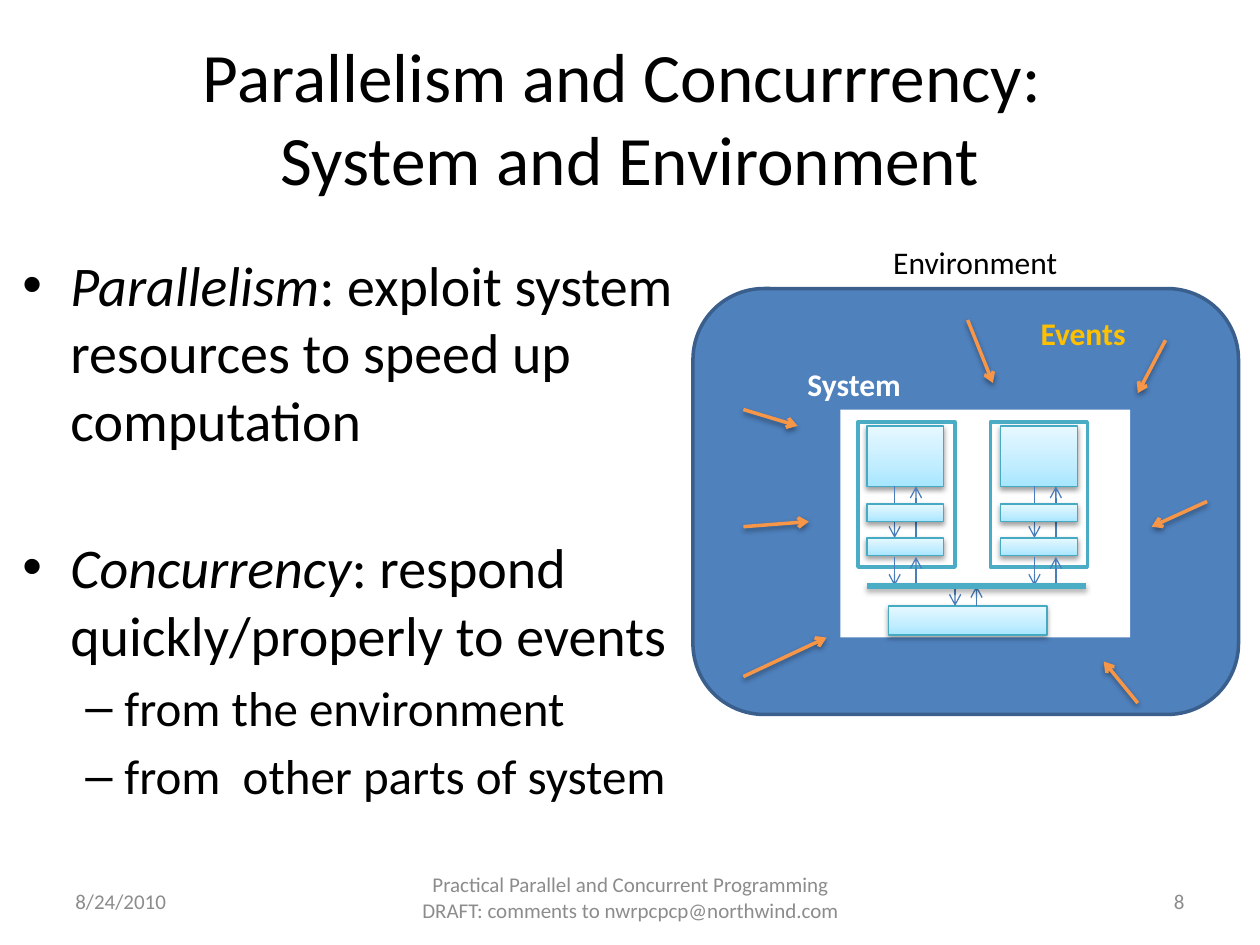
from copy import deepcopy

from lxml import etree
from pptx import Presentation
from pptx.dml.color import RGBColor
from pptx.enum import shapes, text
from pptx.oxml import ns
from pptx.util import Inches, Pt

BLACK = RGBColor(0x00, 0x00, 0x00)
WHITE = RGBColor(0xFF, 0xFF, 0xFF)
GREY = RGBColor(0x8C, 0x8C, 0x8C)
BLUE = RGBColor(0x4F, 0x81, 0xBD)
DARK_BLUE = RGBColor(0x3A, 0x5F, 0x8C)
WIRE_BLUE = RGBColor(0x4A, 0x7E, 0xBB)
TEAL = RGBColor(0x4B, 0xAC, 0xC6)
UNIT_EDGE = RGBColor(0x46, 0xAA, 0xC5)
ORANGE = RGBColor(0xF7, 0x96, 0x46)
GOLD = RGBColor(0xFF, 0xC0, 0x00)
UNIT_STOPS = [
    (0, RGBColor(0xA7, 0xE6, 0xFF)),
    (0.35, RGBColor(0xC1, 0xED, 0xFF)),
    (1, RGBColor(0xE7, 0xF8, 0xFF)),
]
FONT = "Calibri"
LEFT, CENTER, RIGHT = text.PP_ALIGN.LEFT, text.PP_ALIGN.CENTER, text.PP_ALIGN.RIGHT
TOP, MIDDLE = text.MSO_ANCHOR.TOP, text.MSO_ANCHOR.MIDDLE


def add_run(paragraph, words, size, color, bold=False, italic=False):
    run = paragraph.add_run()
    run.text = words
    font = run.font
    font.name, font.size, font.bold, font.italic = FONT, Pt(size), bold, italic
    font.color.rgb = color


def add_text(slide, box, lines, size=18, color=BLACK, bold=False,
             align=LEFT, anchor=TOP, wrap=True):
    frame = slide.shapes.add_textbox(*map(Inches, box)).text_frame
    frame.word_wrap, frame.vertical_anchor = wrap, anchor
    paragraph = frame.paragraphs[0]
    paragraph.alignment = align
    for number, line in enumerate(lines):
        if number:
            paragraph.add_line_break()
        add_run(paragraph, line, size, color, bold)
    return frame


def add_shadow(effects, opacity, distance):
    shadow = etree.SubElement(
        effects, ns.qn("a:outerShdw"), blurRad=str(Pt(3.1)), dist=str(Pt(distance)),
        dir="5400000", rotWithShape="0")
    tint = etree.SubElement(shadow, ns.qn("a:srgbClr"), val="000000")
    etree.SubElement(tint, ns.qn("a:alpha"), val=str(opacity * 1000))


def add_box(slide, box, fill, edge=None, width=2, preset=shapes.MSO_SHAPE.RECTANGLE):
    shape = slide.shapes.add_shape(preset, *map(Inches, box))
    shape.shadow.inherit = False
    if fill is not None:
        shape.fill.solid()
        shape.fill.fore_color.rgb = fill
    if edge is None:
        shape.line.fill.background()
    else:
        shape.line.color.rgb, shape.line.width = edge, Pt(width)
    return shape


def add_unit(slide, *box):
    """A processor or memory part with a light gradient and a shadow."""
    unit = add_box(slide, box, None, UNIT_EDGE, 0.75)
    unit.fill.gradient()
    unit.fill.gradient_angle = 90
    first = unit.fill._fill._gradFill.find(ns.qn("a:gsLst"))[0]
    first.addnext(deepcopy(first))
    for stop, (position, color) in zip(unit.fill.gradient_stops, UNIT_STOPS):
        stop.position, stop.color.rgb = position, color
    add_shadow(unit._element.spPr.find(ns.qn("a:effectLst")), 38, 1.6)


def add_line(slide, x1, y1, x2, y2, color=WIRE_BLUE, width=0.75, arrow=True, shadow=None):
    line = slide.shapes.add_connector(
        shapes.MSO_CONNECTOR.STRAIGHT, *map(Inches, (x1, y1, x2, y2)))
    line.line.color.rgb, line.line.width = color, Pt(width)
    if arrow:
        etree.SubElement(line.line._get_or_add_ln(), ns.qn("a:tailEnd"), type="arrow")
    effects = etree.SubElement(line._element.spPr, ns.qn("a:effectLst"))
    if shadow:
        add_shadow(effects, *shadow)


def add_wire_pair(slide, down_x, up_x, top, bottom):
    add_line(slide, down_x, top, down_x, bottom)
    add_line(slide, up_x, bottom, up_x, top)


def add_points(slide, box):
    points = [
        ("•", 32, 6.4, "Parallelism", ": exploit system resources to speed up computation"),
        ("•", 32, 46, "Concurrency", ": respond quickly/properly to events"),
        ("–", 28, 5.6, "", "from the environment"),
        ("–", 28, 5.6, "", "from  other parts of system"),
    ]
    frame = add_text(slide, box, [])
    for number, (bullet, size, gap, term, rest) in enumerate(points):
        paragraph = frame.add_paragraph() if number else frame.paragraphs[0]
        paragraph.space_before = Pt(gap)
        margin, indent = (0.38, -0.38) if bullet == "•" else (0.81, -0.31)
        props = paragraph._p.get_or_add_pPr()
        props.set("marL", str(Inches(margin)))
        props.set("indent", str(Inches(indent)))
        etree.SubElement(props, ns.qn("a:buFont"), typeface="Arial")
        etree.SubElement(props, ns.qn("a:buChar"), char=bullet)
        if term:
            add_run(paragraph, term, size, BLACK, italic=True)
        add_run(paragraph, rest, size, BLACK)


def add_core(slide, left, top, unit_inset, down_inset):
    """One core: a processor over two cache levels, wired down to the bus."""
    unit_left, down_x = left + unit_inset, left + down_inset
    up_x = down_x + 0.17
    add_box(slide, (left, top, 0.77, 1.15), WHITE, TEAL)
    add_unit(slide, unit_left, top + 0.03, 0.61, 0.48)
    add_wire_pair(slide, down_x, up_x, top + 0.51, top + 0.92)
    for cache_offset in (0.65, 0.92):
        add_unit(slide, unit_left, top + cache_offset, 0.61, 0.14)
    add_wire_pair(slide, down_x, up_x, top + 1.07, top + 1.3)


def add_system(slide, left, top):
    add_box(slide, (left, top, 2.3, 1.81), WHITE)
    add_core(slide, left + 0.14, top + 0.1, 0.07, 0.29)
    add_core(slide, left + 1.19, top + 0.1, 0.08, 0.35)
    bus_y, memory_y = top + 1.4, top + 1.56
    add_unit(slide, left + 0.38, memory_y, 1.26, 0.23)
    add_wire_pair(slide, left + 0.91, left + 1.08, bus_y, memory_y)
    add_line(slide, left + 0.21, bus_y, left + 1.95, bus_y, TEAL, 3,
             arrow=False, shadow=(35, 1.8))


def add_environment(slide, left, top):
    add_box(slide, (left, top, 4.33, 3.38), BLUE, DARK_BLUE,
            preset=shapes.MSO_SHAPE.ROUNDED_RECTANGLE)
    add_text(slide, (left + 1.49, top - 0.41, 1.52, 0.4), ["Environment"], wrap=False)
    add_system(slide, left + 1.17, top + 0.96)
    add_text(slide, (left + 0.81, top + 0.56, 0.95, 0.4), ["System"],
             color=WHITE, bold=True, wrap=False)
    events = [
        (3.75, 0.41, 3.53, 0.83), (0.4, 3.08, 1.06, 2.77), (4.08, 1.69, 3.64, 1.89),
        (3.53, 3.29, 3.26, 2.96), (0.4, 1.89, 0.92, 1.85), (0.4, 0.96, 0.83, 1.09),
        (2.18, 0.25, 2.38, 0.75),
    ]
    for x1, y1, x2, y2 in events:
        add_line(slide, left + x1, top + y1, left + x2, top + y2, ORANGE, 2,
                 shadow=(38, 1.6))
    add_text(slide, (left + 2.66, top + 0.15, 0.88, 0.4), ["Events"],
             color=GOLD, bold=True, wrap=False)


def add_footer(slide, top):
    small = {"size": 12, "color": GREY, "anchor": MIDDLE}
    add_text(slide, (0.5, top, 2.33, 0.4), ["8/24/2010"], **small)
    credit = add_text(
        slide, (3.17, top + 0.07, 3.67, 0.4),
        ["Practical Parallel and Concurrent Programming "
         "DRAFT: comments to nwrpcpcp@northwind.com"],
        align=CENTER, **small)
    credit.margin_bottom = Inches(0.25)
    add_text(slide, (7.17, top, 2.33, 0.4), ["8"], align=RIGHT, **small)


def main():
    deck = Presentation()
    deck.slide_width, deck.slide_height = Inches(10), Inches(7.5)
    slide = deck.slides.add_slide(deck.slide_layouts[6])
    add_text(slide, (0.5, 0.3, 9, 1.25),
             ["Parallelism and Concurrrency: ", "System and Environment"],
             size=39.6, align=CENTER, anchor=MIDDLE)
    add_points(slide, (0.08, 1.94, 5.5, 4.95))
    add_environment(slide, 5.5, 2.29)
    add_footer(slide, 6.95)
    deck.save("out.pptx")


if __name__ == "__main__":
    main()
